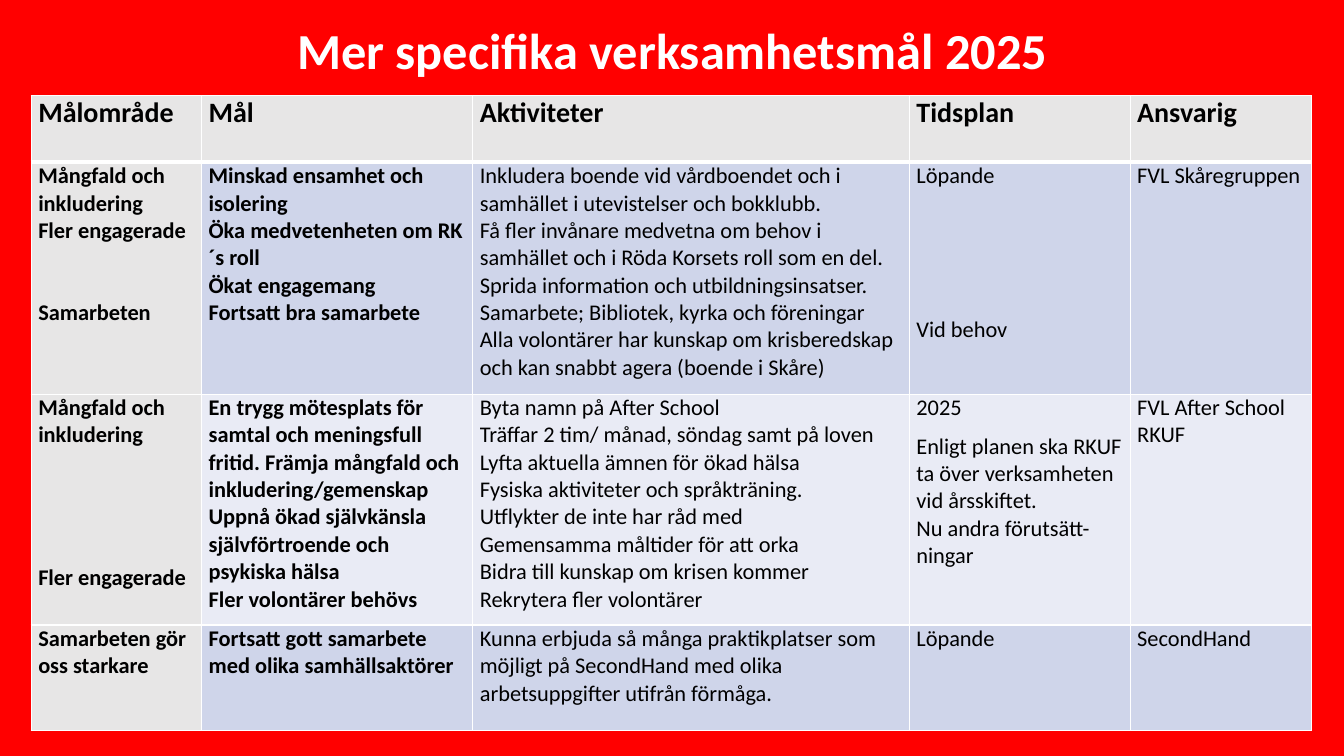
from lxml import etree
from pptx import Presentation
from pptx.dml.color import RGBColor
from pptx.enum import text as t
from pptx.oxml import ns
from pptx.util import Inches, Pt

TITLE = "Mer specifika verksamhetsmål 2025"
HEADINGS = ["Målområde", "Mål", "Aktiviteter", "Tidsplan", "Ansvarig"]
# Each cell is a list of (points of space before, text) paragraphs
GOALS = [
    [
        [(0, "Mångfald och inkludering\nFler engagerade"), (39, "Samarbeten")],
        [(0, "Minskad ensamhet och isolering\nÖka medvetenheten om RK´s roll\n"
             "Ökat engagemang\nFortsatt bra samarbete")],
        [(0, "Inkludera boende vid vårdboendet och i samhället i utevistelser och bokklubb.\n"
             "Få fler invånare medvetna om behov i samhället och i Röda Korsets roll som en del.\n"
             "Sprida information och utbildningsinsatser.\n"
             "Samarbete; Bibliotek, kyrka och föreningar\n"
             "Alla volontärer har kunskap om krisberedskap och kan snabbt agera (boende i Skåre)")],
        [(0, "Löpande"), (90.5, "Vid behov")],
        [(0, "FVL Skåregruppen")],
    ],
    [
        [(0, "Mångfald och inkludering"), (82.5, "Fler engagerade")],
        [(0, "En trygg mötesplats för samtal och meningsfull fritid. "
             "Främja mångfald och inkludering/gemenskap\nUppnå ökad självkänsla\n"
             "självförtroende och psykiska hälsa\nFler volontärer behövs")],
        [(0, "Byta namn på After School\nTräffar 2 tim/ månad, söndag samt på loven\n"
             "Lyfta aktuella ämnen för ökad hälsa\nFysiska aktiviteter och språkträning.\n"
             "Utflykter de inte har råd med\nGemensamma måltider för att orka\n"
             "Bidra till kunskap om krisen kommer\nRekrytera fler volontärer")],
        [(0, "2025"), (8, "Enligt planen ska RKUF ta över verksamheten vid årsskiftet.\n"
                          "Nu andra förutsätt-ningar")],
        [(0, "FVL After School\nRKUF")],
    ],
    [
        [(0, "Samarbeten gör oss starkare")],
        [(0, "Fortsatt gott samarbete med olika samhällsaktörer")],
        [(0, "Kunna erbjuda så många praktikplatser som möjligt på SecondHand "
             "med olika arbetsuppgifter utifrån förmåga.")],
        [(0, "Löpande")],
        [(0, "SecondHand")],
    ],
]
COLUMN_WIDTHS = [1.69, 2.69, 4.33, 2.19, 1.8]
ROW_HEIGHTS = [0.66, 2.3, 2.29, 1.05]

FONT = "Calibri"
RED = RGBColor(0xFF, 0x00, 0x00)
WHITE = RGBColor(0xFF, 0xFF, 0xFF)
BLACK = RGBColor(0x00, 0x00, 0x00)
GREY = RGBColor(0xE7, 0xE6, 0xE6)
BANDS = [RGBColor(0xE9, 0xEB, 0xF5), RGBColor(0xCF, 0xD5, 0xEA)]


def add_lines(paragraph, content, size, color, bold):
    for i, line in enumerate(content.split("\n")):
        if i:
            paragraph.add_line_break()
        run = paragraph.add_run()
        run.text = line
        run.font.name = FONT
        run.font.size = Pt(size)
        run.font.bold = bold
        run.font.color.rgb = color
    paragraph.font.size = Pt(size)


def set_borders(cell, top, bottom):
    properties = cell._tc.get_or_add_tcPr()
    for side, width in (("L", 1), ("R", 1), ("T", top), ("B", bottom)):
        line = etree.SubElement(properties, ns.qn("a:ln" + side), w=str(Pt(width)))
        fill = etree.SubElement(line, ns.qn("a:solidFill"))
        etree.SubElement(fill, ns.qn("a:srgbClr"), val=str(WHITE))


def fill_cell(cell, row, column, paragraphs):
    cell.margin_left = cell.margin_right = Inches(0.07)
    cell.margin_top = cell.margin_bottom = 0
    cell.vertical_anchor = t.MSO_ANCHOR.TOP
    set_borders(cell, 3 if row == 1 else 1, 3 if row == 0 else 1)
    cell.fill.solid()
    cell.fill.fore_color.rgb = GREY if row == 0 or column == 0 else BANDS[row % 2]
    for i, (gap, content) in enumerate(paragraphs):
        frame = cell.text_frame
        paragraph = frame.add_paragraph() if i else frame.paragraphs[0]
        if gap:
            paragraph.space_before = Pt(gap)
        add_lines(paragraph, content, 16 if row else 20, BLACK, row == 0 or column < 2)


def main():
    prs = Presentation()
    prs.slide_width, prs.slide_height = Inches(13.33), Inches(7.5)
    slide = prs.slides.add_slide(prs.slide_layouts[5])
    slide.background.fill.solid()
    slide.background.fill.fore_color.rgb = RED

    # Title
    title = slide.shapes.title
    title.left, title.top = Inches(0.92), Inches(0.14)
    title.width, title.height = Inches(11.5), Inches(0.93)
    frame = title.text_frame
    frame.word_wrap = True
    frame.auto_size = t.MSO_AUTO_SIZE.NONE
    frame.vertical_anchor = t.MSO_ANCHOR.MIDDLE
    frame.margin_bottom = Inches(0.21)
    heading = frame.paragraphs[0]
    heading.alignment = t.PP_ALIGN.CENTER
    heading.line_spacing = 0.9
    add_lines(heading, TITLE, 36, WHITE, True)

    # Table of goals
    rows = [[[(0, name)] for name in HEADINGS]] + GOALS
    goals = slide.shapes.add_table(
        len(rows), len(HEADINGS), Inches(0.31), Inches(0.95),
        Inches(sum(COLUMN_WIDTHS)), Inches(sum(ROW_HEIGHTS))).table
    for column, width in zip(goals.columns, COLUMN_WIDTHS):
        column.width = Inches(width)
    for row, height in zip(goals.rows, ROW_HEIGHTS):
        row.height = Inches(height)
    for r, row in enumerate(rows):
        for c, paragraphs in enumerate(row):
            fill_cell(goals.cell(r, c), r, c, paragraphs)

    prs.save("out.pptx")


if __name__ == "__main__":
    main()
